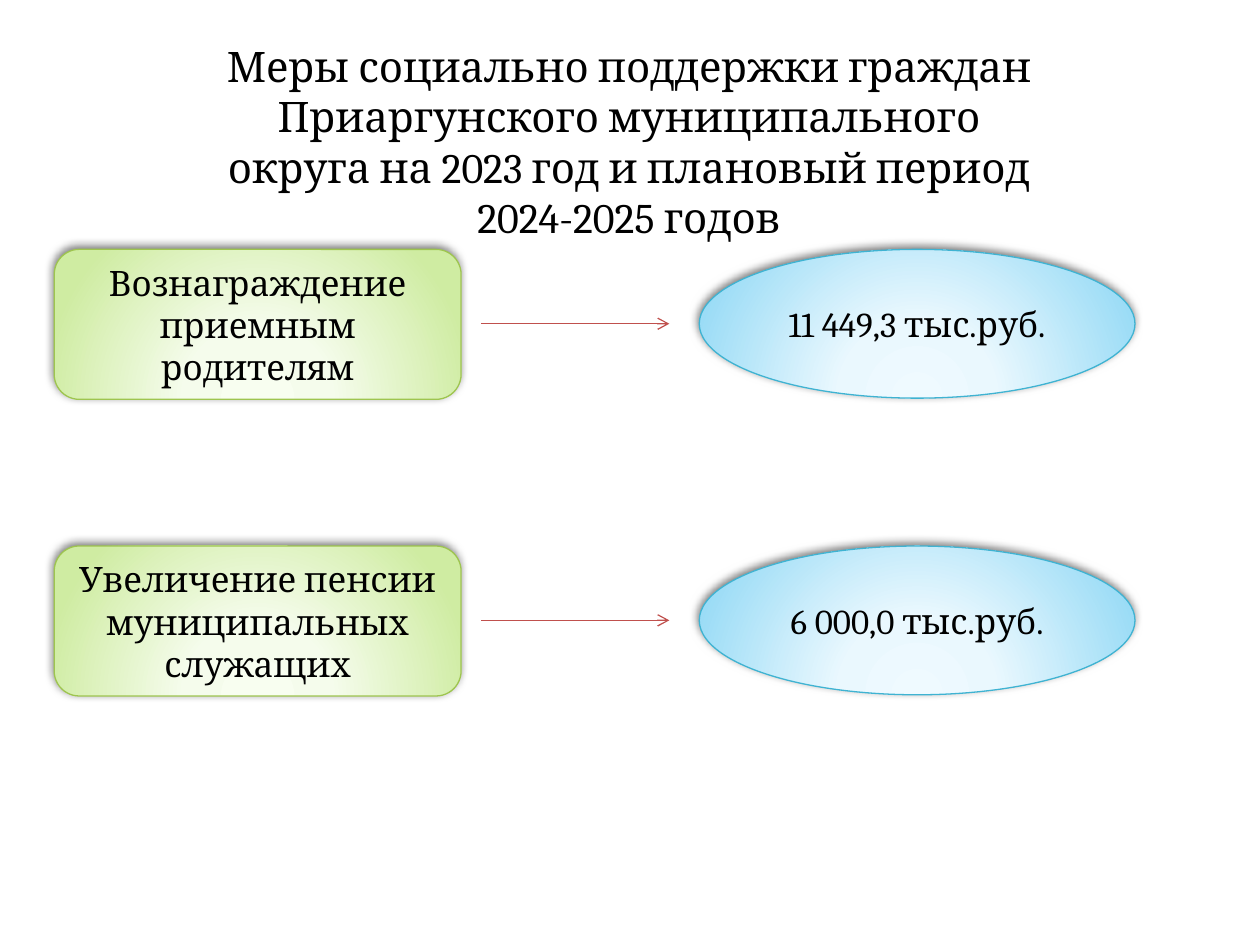
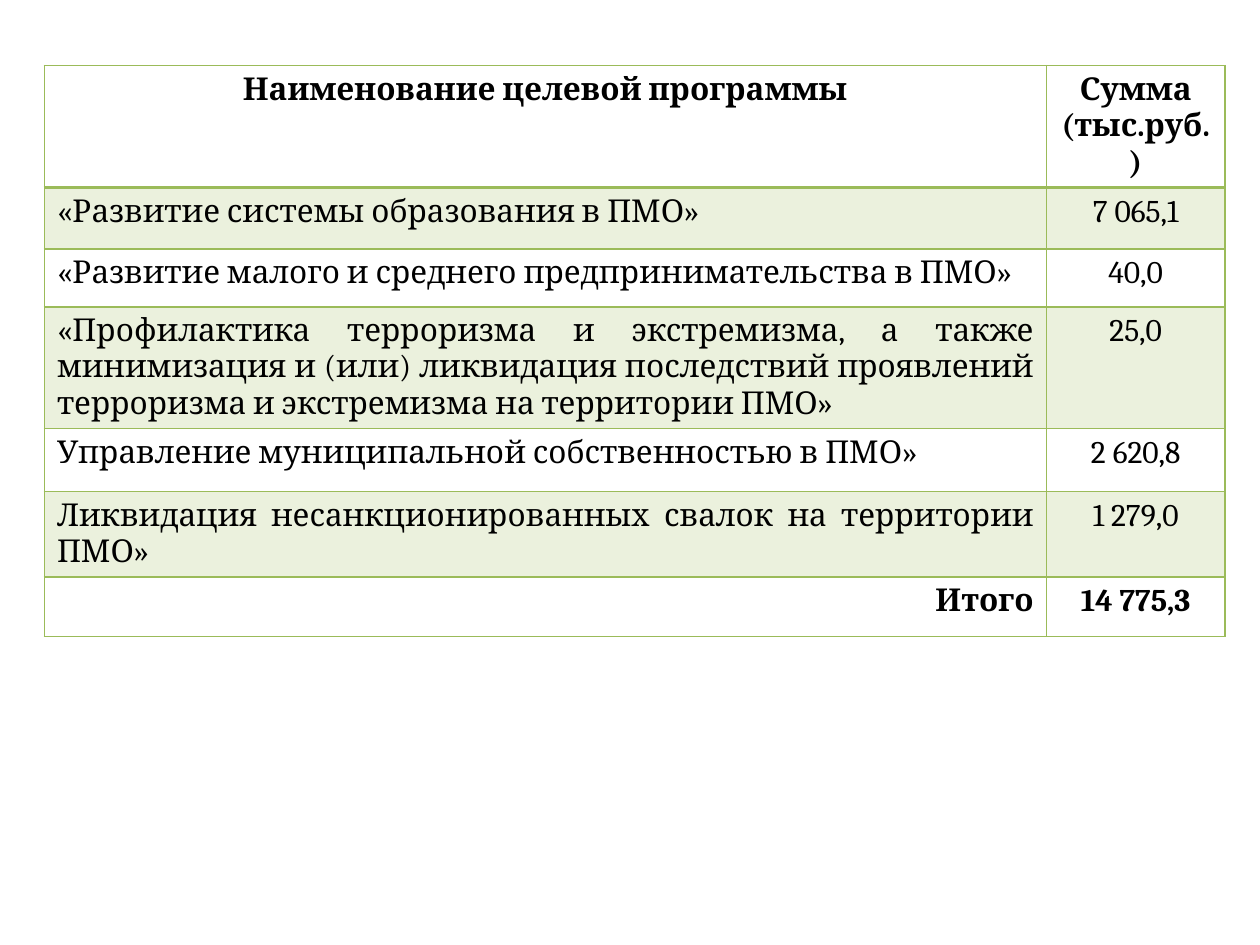
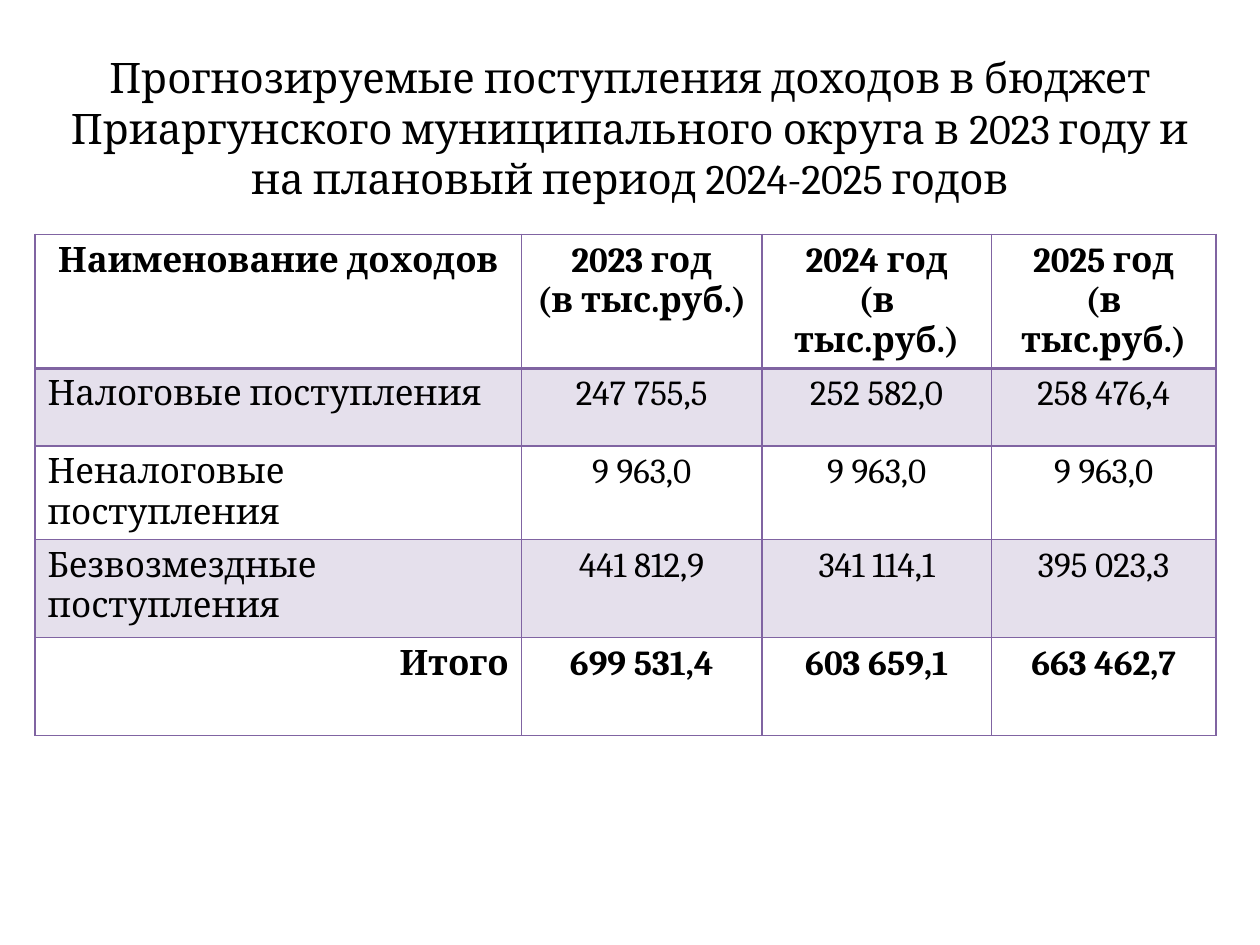
from pptx import Presentation
from pptx.dml.color import RGBColor
from pptx.enum.shapes import MSO_CONNECTOR, MSO_SHAPE
from pptx.enum.text import MSO_ANCHOR, MSO_AUTO_SIZE, PP_ALIGN as Align
from pptx.oxml import parse_xml
from pptx.oxml.ns import nsdecls
from pptx.util import Pt

FONT = "Cambria"
BLACK = "000000"
RED = "C0504D"
GREEN = "9BBB59"
PURPLE = "8064A2"
NAMESPACE = nsdecls("a")
TITLE_ONLY, BLANK = 5, 6


def color(hex_string):
    return RGBColor.from_string(hex_string)


def write_text(frame, text, size=20, bold=False, align=Align.CENTER, anchor=MSO_ANCHOR.TOP):
    frame.word_wrap = True
    frame.vertical_anchor = anchor
    paragraph = frame.paragraphs[0]
    paragraph.text = text
    paragraph.alignment = align
    font = paragraph.font
    font.name, font.size, font.bold = FONT, Pt(size), bold
    font.color.rgb = color(BLACK)


presentation = Presentation()
presentation.slide_width, presentation.slide_height = Pt(720), Pt(540)

# Slide 1: support measures and their amounts
slide = presentation.slides.add_slide(presentation.slide_layouts[TITLE_ONLY])
title = slide.shapes.title
title.left, title.top, title.width, title.height = Pt(113), Pt(19.5), Pt(493), Pt(124)
write_text(title.text_frame,
           "Меры социально поддержки граждан Приаргунского муниципального "
           "округа на 2023 год и плановый период 2024-2025 годов", size=24)
title.text_frame.auto_size = MSO_AUTO_SIZE.NONE

# Kind, left, width, height, line colour, gradient from centre to edge
measure_style = (MSO_SHAPE.ROUNDED_RECTANGLE, 31, 232.5, 85.7, "9EC54F",
                 ("F8FEF0", "F5FCEC", "CFECA2"))
amount_style = (MSO_SHAPE.OVAL, 399.6, 249, 85, "3FB3D2",
                ("EFFAFF", "EAF8FE", "9BDCF6"))
measures = [
    ("Вознаграждение приемным родителям", "11 449,3 тыс.руб."),
    ("Увеличение пенсии муниципальных служащих", "6 000,0 тыс.руб."),
]
for row, texts in enumerate(measures):
    top = 142.5 + 169.5 * row
    for text, style in zip(texts, (measure_style, amount_style)):
        kind, left, width, height, line_color, gradient = style
        shape = slide.shapes.add_shape(kind, Pt(left), Pt(top), Pt(width), Pt(height))
        shape.line.color.rgb = color(line_color)
        shape.line.width = Pt(0.75)
        shape.shadow.inherit = False
        stops = "".join(f'<a:gs pos="{position}"><a:srgbClr val="{stop}"/></a:gs>'
                        for position, stop in zip((0, 34000, 100000), gradient))
        properties = shape._element.spPr
        properties.insert(2, parse_xml(
            f'<a:gradFill {NAMESPACE} rotWithShape="1"><a:gsLst>{stops}</a:gsLst>'
            '<a:path path="circle"><a:fillToRect l="50000" t="155000" r="50000" b="-55000"/>'
            '</a:path></a:gradFill>'))
        properties[-1].append(parse_xml(
            f'<a:outerShdw {NAMESPACE} blurRad="{Pt(5)}" dist="{Pt(2)}" dir="{245 * 60000}" '
            f'rotWithShape="0"><a:srgbClr val="{BLACK}"><a:alpha val="50000"/></a:srgbClr>'
            '</a:outerShdw>'))
        write_text(shape.text_frame, text, anchor=MSO_ANCHOR.MIDDLE)

    middle = Pt(top + 42.5)
    arrow = slide.shapes.add_connector(MSO_CONNECTOR.STRAIGHT, Pt(275), middle, Pt(382.5), middle)
    arrow.line.color.rgb = color(RED)
    arrow.line.width = Pt(0.75)
    arrow.line._get_or_add_ln().append(parse_xml(f'<a:tailEnd {NAMESPACE} type="arrow"/>'))
    arrow._element.spPr.append(parse_xml(f'<a:effectLst {NAMESPACE}/>'))

# Slides 2 and 3: tables of programmes and of revenues
programmes = [
    ("Наименование целевой программы", "Сумма (тыс.руб.)"),
    ("«Развитие системы образования в ПМО»", "7 065,1"),
    ("«Развитие малого и среднего предпринимательства в ПМО»", "40,0"),
    ("«Профилактика терроризма и экстремизма, а также минимизация и (или) ликвидация "
     "последствий проявлений терроризма и экстремизма на территории ПМО»", "25,0"),
    ("Управление муниципальной собственностью в ПМО»", "2 620,8"),
    ("Ликвидация несанкционированных свалок на территории ПМО»", "1 279,0"),
    ("Итого", "14 775,3"),
]
revenues = [
    ("Наименование доходов", *(f"{year} год\n(в тыс.руб.)" for year in (2023, 2024, 2025))),
    ("Налоговые поступления", "247 755,5", "252 582,0", "258 476,4"),
    ("Неналоговые поступления", "9 963,0", "9 963,0", "9 963,0"),
    ("Безвозмездные поступления", "441 812,9", "341 114,1", "395 023,3"),
    ("Итого", "699 531,4", "603 659,1", "663 462,7"),
]
revenue_title = ("Прогнозируемые поступления доходов в бюджет Приаргунского муниципального "
                 "округа в 2023 году и на плановый период 2024-2025 годов")

# Title, rows, left, top, column widths, row heights, accent, text size, name alignment
tables = [
    (None, programmes, 25.4, 37.5, (572.5, 102.2),
     (45.4, 35.3, 33, 35.3, 36, 34, 34), GREEN, 18, Align.JUSTIFY),
    (revenue_title, revenues, 20, 134, (278, 137.4, 131.2, 128.2),
     (72.7, 44.6, 42.5, 56, 56), PURPLE, 20, Align.LEFT),
]
for heading, rows, left, top, widths, heights, accent, size, name_align in tables:
    layout = presentation.slide_layouts[TITLE_ONLY if heading else BLANK]
    slide = presentation.slides.add_slide(layout)
    if heading:
        title = slide.shapes.title
        title.left, title.top, title.width, title.height = Pt(20), Pt(26), Pt(680), Pt(94.5)
        write_text(title.text_frame, heading, size=24)
        title.text_frame.auto_size = MSO_AUTO_SIZE.NONE

    table = slide.shapes.add_table(len(rows), len(widths), Pt(left), Pt(top),
                                   Pt(sum(widths)), Pt(sum(heights))).table
    for column, width in zip(table.columns, widths):
        column.width = Pt(width)
    last = len(rows) - 1
    for row, texts in enumerate(rows):
        table.rows[row].height = Pt(heights[row])
        for column, text in enumerate(texts):
            cell = table.cell(row, column)
            align = Align.CENTER
            if column == 0 and row > 0:
                align = Align.RIGHT if row == last else name_align
            write_text(cell.text_frame, text, size=size, bold=row in (0, last), align=align)

            # Tint every second row
            if row % 2:
                cell.fill.solid()
                cell.fill.fore_color.rgb = color(accent)
                tint = cell._tc.tcPr.find(".//{*}srgbClr")
                tint.append(parse_xml(f'<a:alpha {NAMESPACE} val="20000"/>'))
            else:
                cell.fill.background()

            # Thin borders, with a thicker one under the header
            borders = (("lnL", 1), ("lnR", 1), ("lnT", 2 if row == 1 else 1),
                       ("lnB", 2 if row == 0 else 1))
            for index, (side, weight) in enumerate(borders):
                cell._tc.tcPr.insert(index, parse_xml(
                    f'<a:{side} {NAMESPACE} w="{Pt(weight)}"><a:solidFill>'
                    f'<a:srgbClr val="{accent}"/></a:solidFill></a:{side}>'))

presentation.save("out.pptx")
